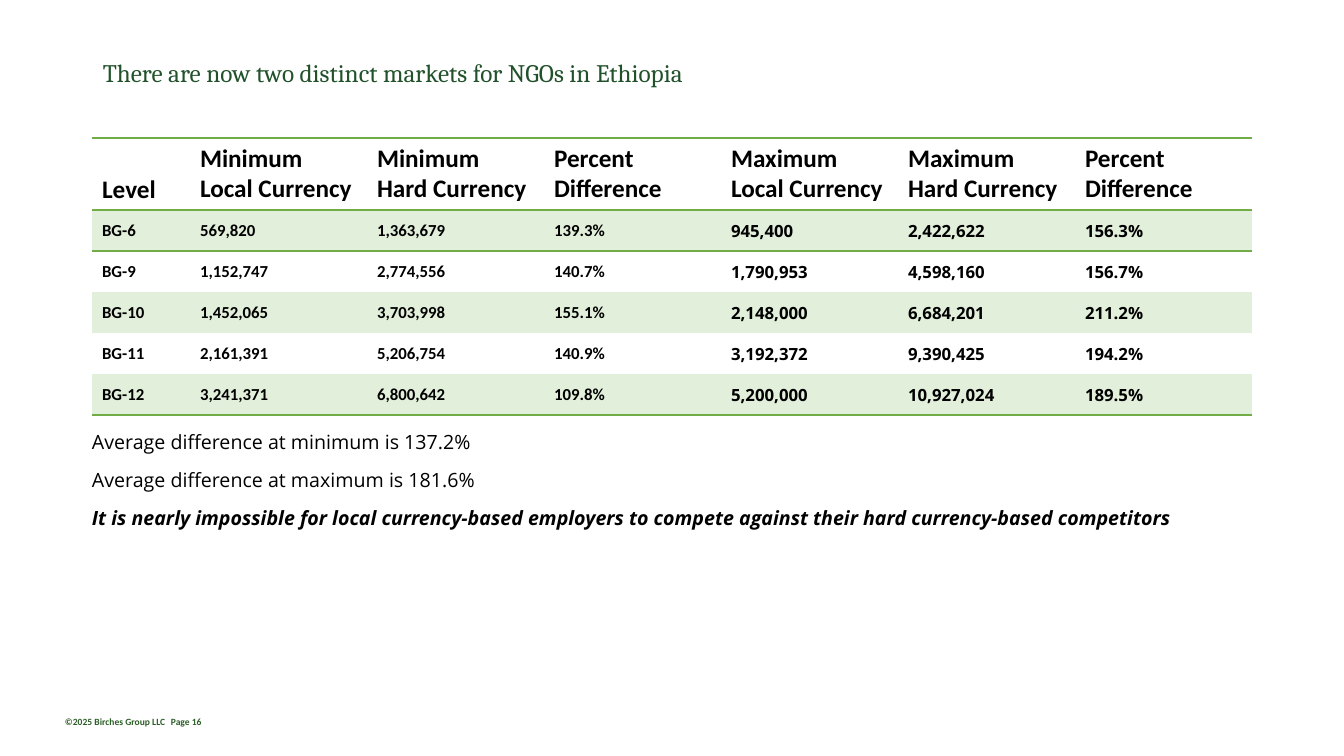
from lxml import etree
from pptx import Presentation
from pptx import util as u
from pptx.dml.color import RGBColor
from pptx.enum import text
from pptx.oxml.ns import qn

EMU_PER_PX = 914400 / 100.8
THEME = {
    "title": {"name": "Cambria", "size": 18, "color": "22522C"},
    "header": {"name": "Calibri", "size": 18, "color": "000000", "bold": True},
    "minimum": {"name": "Calibri", "size": 12, "color": "000000", "bold": True},
    "maximum": {"name": "Open Sans", "size": 12, "color": "000000", "bold": True},
    "note": {"name": "Open Sans", "size": 14, "color": "000000"},
    "conclusion": {"name": "Open Sans", "size": 14, "color": "000000", "bold": True, "italic": True},
    "footer": {"name": "Calibri", "size": 6.8, "color": "2C5E28", "bold": True},
    "rule": "70AD47",
    "band": "E2EFDA",
}


def px(length):
    return u.Emu(round(length * EMU_PER_PX))


def write(frame, lines, style, **layout):
    """Fill a text frame with (line, style) pairs or plain lines in one style."""
    for index, line in enumerate(lines):
        paragraph = frame.paragraphs[0] if index == 0 else frame.add_paragraph()
        for name, value in layout.items():
            setattr(paragraph, name, value)
        words, look = line if isinstance(line, tuple) else (line, style)
        run = paragraph.add_run()
        run.text = words
        for name, value in THEME[look].items():
            if name == "color":
                run.font.color.rgb = RGBColor.from_string(value)
            else:
                setattr(run.font, name, u.Pt(value) if name == "size" else value)


presentation = Presentation()
presentation.slide_width, presentation.slide_height = px(1344), px(756)
slide = presentation.slides.add_slide(presentation.slide_layouts[6])

# Footer
footer = slide.shapes.add_textbox(px(55), px(711), px(304), px(21)).text_frame
footer.word_wrap = True
properties = footer.paragraphs[0]._p.get_or_add_pPr()
tabs = etree.SubElement(properties, qn("a:tabLst"))
etree.SubElement(tabs, qn("a:tab"), pos=str(px(106)), algn="l")
write(footer, ["©2025 Birches Group LLC\tPage 16"], "footer")

# Title
title = slide.shapes.add_textbox(px(93), px(40), px(1159), px(68)).text_frame
title.word_wrap = True
title.vertical_anchor = text.MSO_ANCHOR.MIDDLE
write(title, ["There are now two distinct markets for NGOs in Ethiopia"], "title", line_spacing=0.9)

# Salary table
ROWS = [
    ["Level", "Minimum\nLocal Currency", "Minimum\nHard Currency", "Percent\nDifference",
     "Maximum\nLocal Currency", "Maximum\nHard Currency", "Percent\nDifference"],
    ["BG-6", "569,820", "1,363,679", "139.3%", "945,400", "2,422,622", "156.3%"],
    ["BG-9", "1,152,747", "2,774,556", "140.7%", "1,790,953", "4,598,160", "156.7%"],
    ["BG-10", "1,452,065", "3,703,998", "155.1%", "2,148,000", "6,684,201", "211.2%"],
    ["BG-11", "2,161,391", "5,206,754", "140.9%", "3,192,372", "9,390,425", "194.2%"],
    ["BG-12", "3,241,371", "6,800,642", "109.8%", "5,200,000", "10,927,024", "189.5%"],
]
LAST_ROW = len(ROWS) - 1
RULED_SIDES = {0: ["lnT", "lnB"], 1: ["lnT"], LAST_ROW: ["lnB"]}
NO_STYLE = "{2D5ABB26-0587-4C30-8999-92F81FD0307C}"

frame = slide.shapes.add_table(len(ROWS), len(ROWS[0]), px(92), px(138), px(1160), px(277))
table = frame.table
table.horz_banding = False
table._tbl.tblPr.find(qn("a:tableStyleId")).text = NO_STYLE
for index, column in enumerate(table.columns):
    column.width = px(177 if index else 98)
for index, row in enumerate(table.rows):
    row.height = px(41 if index else 72)

for row, values in enumerate(ROWS):
    for column, value in enumerate(values):
        cell = table.cell(row, column)
        style = "header" if row == 0 else "minimum" if column < 4 else "maximum"
        write(cell.text_frame, value.split("\n"), style)
        at_bottom = row == 0 and column == 0
        cell.vertical_anchor = text.MSO_ANCHOR.BOTTOM if at_bottom else text.MSO_ANCHOR.MIDDLE
        if row % 2:
            cell.fill.solid()
            cell.fill.fore_color.rgb = RGBColor.from_string(THEME["band"])
        else:
            cell.fill.background()
        cell_properties = cell._tc.get_or_add_tcPr()
        for position, side in enumerate(RULED_SIDES.get(row, [])):
            line = etree.Element(qn(f"a:{side}"), w=str(u.Pt(1)))
            fill = etree.SubElement(line, qn("a:solidFill"))
            etree.SubElement(fill, qn("a:srgbClr"), val=THEME["rule"])
            cell_properties.insert(position, line)

# Findings
findings = slide.shapes.add_textbox(px(92), px(433), px(1160), px(237)).text_frame
findings.word_wrap = True
for side in ("left", "top", "right", "bottom"):
    setattr(findings, f"margin_{side}", 0)
write(findings, [
    "Average difference at minimum is 137.2%",
    "Average difference at maximum is 181.6%",
    ("It is nearly impossible for local currency-based employers to compete "
     "against their hard currency-based competitors", "conclusion"),
], "note", line_spacing=0.9, space_after=u.Pt(12))

presentation.save("out.pptx")
